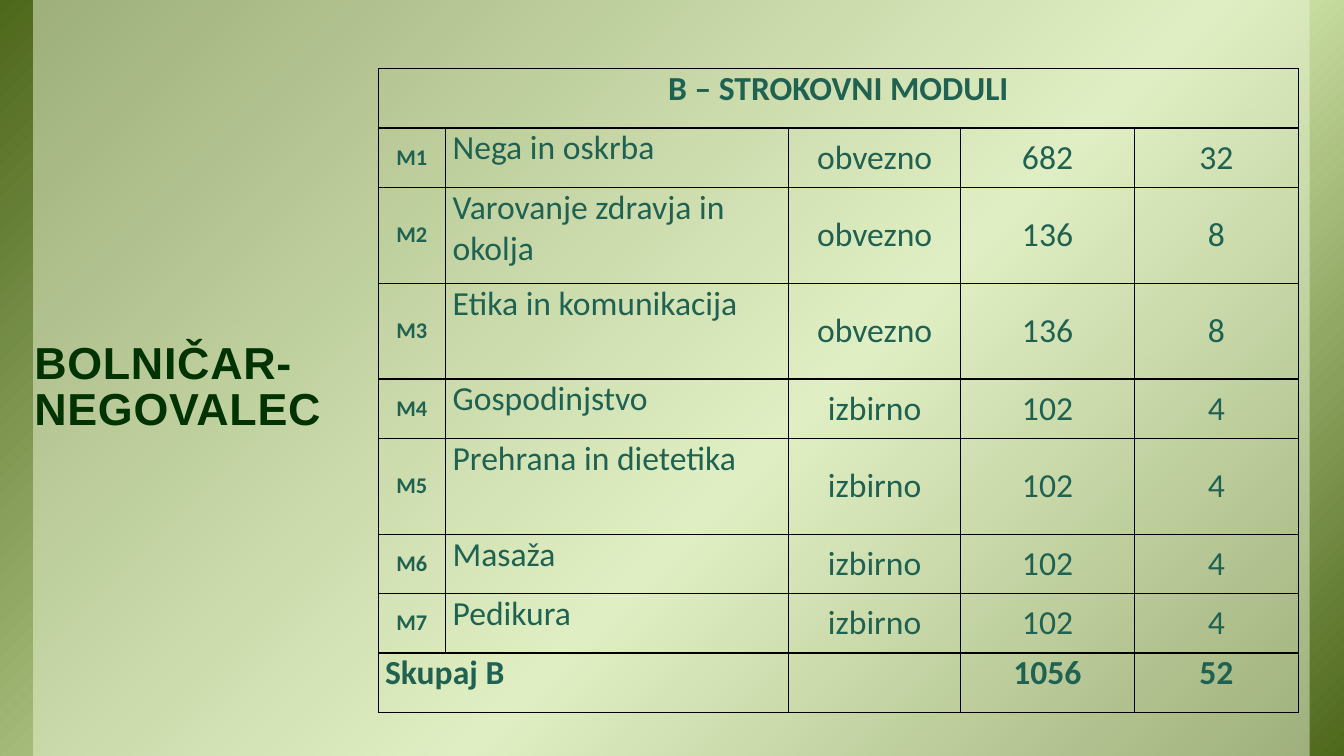
from copy import deepcopy

from lxml.etree import SubElement
from pptx import Presentation
from pptx.dml.color import RGBColor
from pptx.enum.shapes import MSO_SHAPE
from pptx.enum.text import MSO_ANCHOR, MSO_AUTO_SIZE, PP_ALIGN
from pptx.oxml.ns import qn
from pptx.util import Inches, Pt

WIDTH, HEIGHT = 13.33, 7.5
TITLE = "BOLNIČAR-NEGOVALEC"
HEADING = "B – STROKOVNI MODULI"
MODULES = [
    ("M1", "Nega in oskrba", "obvezno", "682", "32"),
    ("M2", "Varovanje zdravja in okolja", "obvezno", "136", "8"),
    ("M3", "Etika in komunikacija", "obvezno", "136", "8"),
    ("M4", "Gospodinjstvo", "izbirno", "102", "4"),
    ("M5", "Prehrana in dietetika", "izbirno", "102", "4"),
    ("M6", "Masaža", "izbirno", "102", "4"),
    ("M7", "Pedikura", "izbirno", "102", "4"),
]
TOTAL = ("Skupaj B", "", "", "1056", "52")
ROWS = [(HEADING, "", "", "", ""), *MODULES, TOTAL]
COLUMN_WIDTHS = [0.67, 3.4, 1.71, 1.72, 1.63]
LOW_ROW, TALL_ROW = 0.59, 0.95
TALL_MODULES = {"M2", "M3", "M5"}
GRADIENT = [(0, "4D671B"), (0.58, "D6EAAF"), (1, "4D671B")]
PANEL, TITLE_GREEN, TEXT_GREEN, BORDER = "EBF5D7", "003300", "206252", "000000"


def color(code):
    return RGBColor.from_string(code)


def set_values(target, values):
    for name, value in values.items():
        setattr(target, name, value)


def add_backdrop(page, left, width, depth):
    """Add a full-height rectangle at the given depth behind the content."""
    box = page.shapes.add_shape(
        MSO_SHAPE.RECTANGLE, Inches(left), 0, Inches(width), Inches(HEIGHT))
    box.shadow.inherit = False
    box.line.fill.background()
    page.shapes._spTree.insert(2 + depth, box._element)
    return box


def add_background(page):
    base = add_backdrop(page, 0, WIDTH, 0)
    base.fill.gradient()
    base.fill.gradient_angle = 315
    stop_list = base._element.spPr.find(".//" + qn("a:gsLst"))
    stop_list.append(deepcopy(stop_list[0]))
    for stop, (position, code) in zip(base.fill.gradient_stops, GRADIENT):
        stop.position = position
        stop.color.rgb = color(code)

    panel = add_backdrop(page, 0.33, 12.66, 1)
    panel.fill.solid()
    panel.fill.fore_color.rgb = color(PANEL)
    tint = panel._element.spPr.find(".//" + qn("a:srgbClr"))
    SubElement(tint, qn("a:alpha"), val="50000")


def add_title(page):
    title = page.shapes.title
    set_values(title, dict(left=Inches(0.21), top=Inches(2.88),
                           width=Inches(3.39), height=Inches(1.5)))
    frame = title.text_frame
    set_values(frame, dict(
        word_wrap=True, auto_size=MSO_AUTO_SIZE.NONE,
        vertical_anchor=MSO_ANCHOR.BOTTOM,
        margin_left=Inches(0.13), margin_right=Inches(0.13),
        margin_top=Inches(0.07), margin_bottom=Inches(0.07)))
    para = frame.paragraphs[0]
    set_values(para, dict(alignment=PP_ALIGN.LEFT, line_spacing=0.85))
    span = para.add_run()
    span.text = TITLE
    set_values(span.font, dict(name="Arial", size=Pt(32), bold=True))
    span.font.color.rgb = color(TITLE_GREEN)
    span._r.get_or_add_rPr().set("spc", "50")


def add_borders(cell):
    properties = cell._tc.get_or_add_tcPr()
    for side in ("lnL", "lnR", "lnT", "lnB"):
        line = SubElement(properties, qn("a:" + side), w=str(Pt(1)))
        fill = SubElement(line, qn("a:solidFill"))
        SubElement(fill, qn("a:srgbClr"), val=BORDER)


def fill_cell(cell, text, is_module, column):
    add_borders(cell)
    cell.fill.background()
    centred = is_module and column != 1
    set_values(cell, dict(
        margin_left=Inches(0.07), margin_right=Inches(0.07),
        margin_top=0, margin_bottom=0,
        vertical_anchor=MSO_ANCHOR.MIDDLE if centred else MSO_ANCHOR.TOP))
    cell.text = text
    para = cell.text_frame.paragraphs[0]
    to_left = text == TOTAL[0] or (is_module and column == 1)
    para.alignment = PP_ALIGN.LEFT if to_left else PP_ALIGN.CENTER
    is_code = is_module and column == 0
    for font in [para.font, *(span.font for span in para.runs)]:
        set_values(font, dict(name="Calibri", size=Pt(16 if is_code else 24),
                              bold=is_code or not is_module))
        font.color.rgb = color(TEXT_GREEN)


def add_module_table(page):
    heights = [TALL_ROW if row[0] in TALL_MODULES else LOW_ROW for row in ROWS]
    table = page.shapes.add_table(
        len(ROWS), len(COLUMN_WIDTHS), Inches(3.75), Inches(0.68),
        Inches(sum(COLUMN_WIDTHS)), Inches(sum(heights))).table
    set_values(table, dict(first_row=False, horz_banding=False))
    for column, width in zip(table.columns, COLUMN_WIDTHS):
        column.width = Inches(width)
    for row, height in zip(table.rows, heights):
        row.height = Inches(height)
    for r, values in enumerate(ROWS):
        for c, text in enumerate(values):
            fill_cell(table.cell(r, c), text, values in MODULES, c)
    last = len(ROWS) - 1
    table.cell(0, 0).merge(table.cell(0, len(COLUMN_WIDTHS) - 1))
    table.cell(last, 0).merge(table.cell(last, 1))


def main():
    deck = Presentation()
    set_values(deck, dict(slide_width=Inches(WIDTH), slide_height=Inches(HEIGHT)))
    page = deck.slides.add_slide(deck.slide_layouts[5])
    add_background(page)
    add_title(page)
    add_module_table(page)
    deck.save("out.pptx")


if __name__ == "__main__":
    main()
